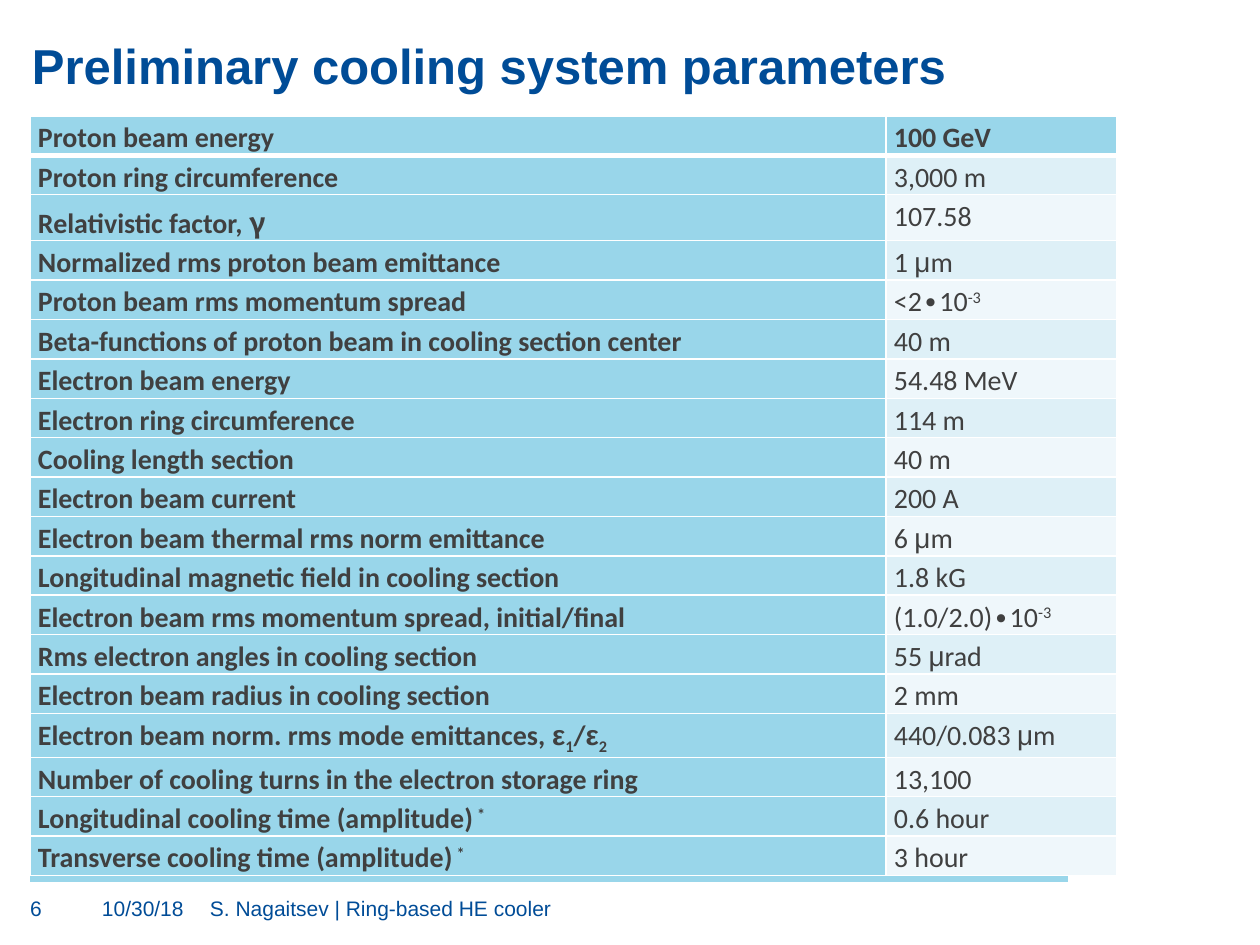
from lxml.etree import SubElement
from pptx import Presentation
from pptx.dml.color import RGBColor
from pptx.enum.shapes import MSO_CONNECTOR
from pptx.enum.text import MSO_ANCHOR, PP_ALIGN
from pptx.oxml.ns import qn
from pptx.util import Emu, Pt

NAVY, SKY, GREY, WHITE = "004C97", "99D6EA", "404040", "FFFFFF"
BANDS = ("EFF7FB", "DEF0F7")
GREEK_FONTS = {"γ": "Noto Sans CJK JP", "μ": "Arial", "ε": "Arial"}
BASELINES = {"^": "30000", "_": "-25000"}
TALL_ROWS = {2: 46, 15: 44}

PARAMETERS = [
    ("Proton beam energy", "100 GeV"),
    ("Proton ring circumference", "3,000 m"),
    ("Relativistic factor, |γ", "107.58"),
    ("Normalized rms proton beam emittance", "1 |μ|m"),
    ("Proton beam rms momentum spread", "<2∙10|^-3"),
    ("Beta-functions of proton beam in cooling section center", "40 m"),
    ("Electron beam energy", "54.48 MeV"),
    ("Electron ring circumference", "114 m"),
    ("Cooling length section", "40 m"),
    ("Electron beam current", "200 A"),
    ("Electron beam thermal rms norm emittance", "6 |μ|m"),
    ("Longitudinal magnetic field in cooling section", "1.8 kG"),
    ("Electron beam rms momentum spread, initial/final", "(1.0/2.0)∙10|^-3"),
    ("Rms electron angles in cooling section", "55 |μ|rad"),
    ("Electron beam radius in cooling section", "2 mm"),
    ("Electron beam norm. rms mode emittances, |ε|_1|/|ε|_2", "440/0.083 |μ|m"),
    ("Number of cooling turns in the electron storage ring", "13,100"),
    ("Longitudinal cooling time (amplitude)|^ *", "0.6 hour"),
    ("Transverse cooling time (amplitude)|^ *", "3 hour"),
]


def px(length):
    return Emu(round(length * 914400 / 126))


def color(value):
    return RGBColor.from_string(value)


class SlideBuilder:
    """Holds the current slide and draws styled elements on it."""

    def __init__(self, presentation):
        self.slide = presentation.slides.add_slide(presentation.slide_layouts[5])

    def format_font(self, paragraph, size, name, hue, bold=False):
        font = paragraph.font
        font.size, font.name, font.bold = Pt(size), name, bold
        font.color.rgb = color(hue)

    def fill_frame(self, frame, text, size, bold=False):
        frame.margin_left = frame.margin_right = 0
        frame.margin_top = frame.margin_bottom = 0
        frame.word_wrap = True
        frame.text = text
        frame.paragraphs[0].alignment = PP_ALIGN.LEFT
        self.format_font(frame.paragraphs[0], size, "Arial", NAVY, bold)

    def title(self, text, left, top, width, height):
        shape = self.slide.shapes.title
        shape.left, shape.top = px(left), px(top)
        shape.width, shape.height = px(width), px(height)
        self.fill_frame(shape.text_frame, text, 28, bold=True)
        shape.text_frame.vertical_anchor = MSO_ANCHOR.BOTTOM

    def text(self, text, left, top, width, height):
        shape = self.slide.shapes.add_textbox(px(left), px(top), px(width), px(height))
        self.fill_frame(shape.text_frame, text, 12)

    def rule(self, left, right, y):
        line = self.slide.shapes.add_connector(
            MSO_CONNECTOR.STRAIGHT, px(left), px(y), px(right), px(y))
        line.line.color.rgb = color(SKY)
        line.line.width = Pt(6)
        SubElement(line._element.spPr, qn("a:effectLst"))

    def borders(self, cell, bottom):
        properties = cell._tc.get_or_add_tcPr()
        for side, width in (("L", 1), ("R", 1), ("T", 1), ("B", bottom)):
            border = SubElement(properties, qn(f"a:ln{side}"), w=str(Pt(width)))
            fill = SubElement(border, qn("a:solidFill"))
            SubElement(fill, qn("a:srgbClr"), val=WHITE)

    def cell(self, cell, text, fill, bold, bottom):
        self.borders(cell, bottom)
        cell.fill.solid()
        cell.fill.fore_color.rgb = color(fill)
        cell.margin_left = cell.margin_right = px(8)
        cell.margin_top = cell.margin_bottom = 0
        paragraph = cell.text_frame.paragraphs[0]
        paragraph.line_spacing, paragraph.space_after = 1.15, Pt(10)
        self.format_font(paragraph, 16, "Calibri", GREY, bold)
        for piece in text.split("|"):
            run = paragraph.add_run()
            run.text = piece.lstrip("^_")
            if piece in GREEK_FONTS:
                run.font.name = GREEK_FONTS[piece]
            if piece[0] in BASELINES:
                run._r.get_or_add_rPr().set("baseline", BASELINES[piece[0]])

    def table(self, rows, left, top, widths, height, tall_rows):
        table = self.slide.shapes.add_table(
            len(rows), len(widths), px(left), px(top), px(sum(widths)), px(height)).table
        for column, width in zip(table.columns, widths):
            column.width = px(width)
        plain_height = (height - sum(tall_rows.values())) / (len(rows) - len(tall_rows))
        for row_index, row in enumerate(rows):
            table.rows[row_index].height = px(tall_rows.get(row_index, plain_height))
            header = row_index == 0
            for column_index, text in enumerate(row):
                strong = header or column_index == 0
                self.cell(table.cell(row_index, column_index), text,
                          SKY if strong else BANDS[row_index % 2], strong,
                          3 if header else 1)


def main():
    presentation = Presentation()
    presentation.slide_width, presentation.slide_height = px(1260), px(945)
    builder = SlideBuilder(presentation)
    builder.rule(30, 1068, 877)
    builder.title("Preliminary cooling system parameters", 32, 35, 1197, 59)
    builder.text("10/30/18", 102, 896, 93, 33)
    builder.text("S. Nagaitsev | Ring-based HE cooler", 210, 896, 863, 33)
    builder.text("6", 30, 896, 57, 33)
    builder.table(PARAMETERS, 30, 116, (856, 231), 760, TALL_ROWS)
    presentation.save("out.pptx")


if __name__ == "__main__":
    main()
